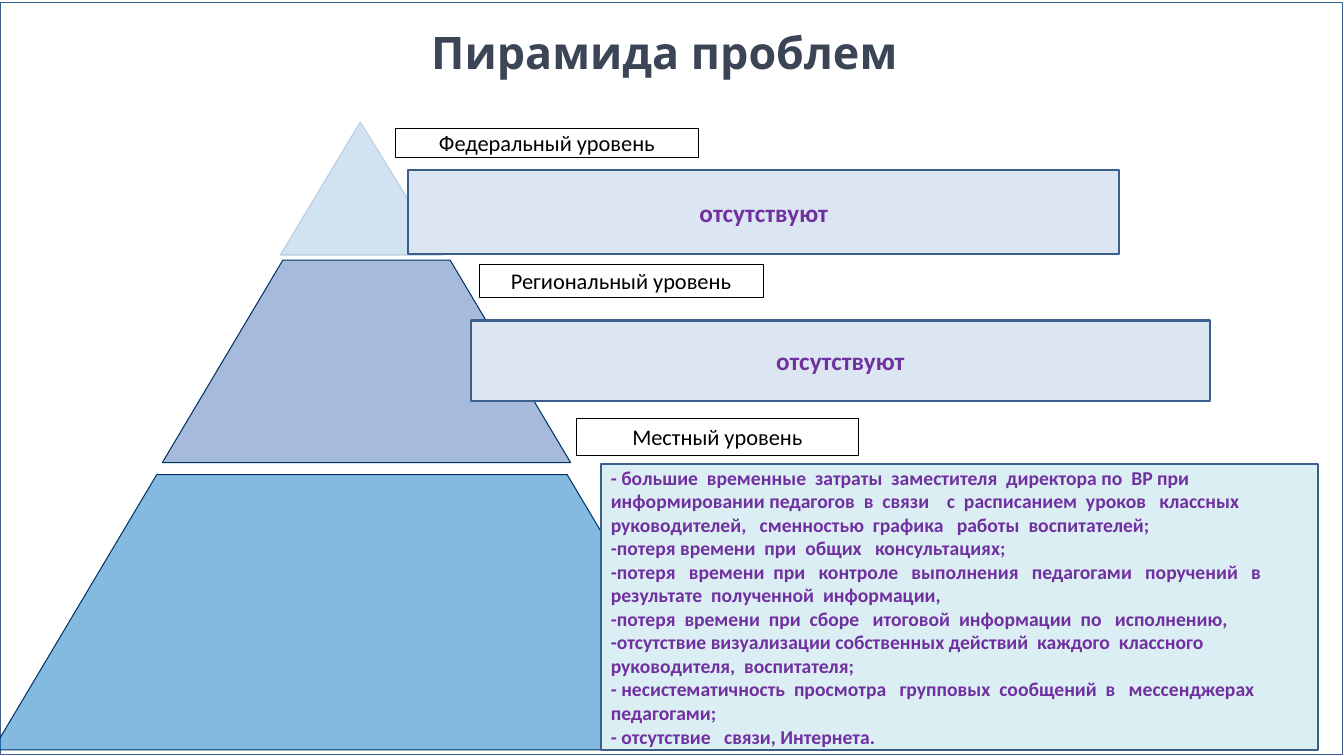
from lxml.etree import SubElement
from pptx import Presentation
from pptx.dml.color import RGBColor
from pptx.enum.shapes import MSO_SHAPE
from pptx.enum.text import MSO_ANCHOR, PP_ALIGN
from pptx.oxml.ns import qn
from pptx.util import Inches, Pt

COLORS = {
    "title": "3B4555", "frame": "3A5F8C", "text": "7030A0", "black": "000000",
    "white": "FFFFFF", "box": "DCE6F2", "local_box": "DBEEF4",
    "top": "327FBE", "top_line": "B9CDE5", "middle": "4770B5",
    "base": "0070C0", "tier_line": "003366",
}

TIERS = [
    (MSO_SHAPE.ISOSCELES_TRIANGLE, (2.78, 1.21, 1.61, 1.32), 0.493, "top", 22, "top_line"),
    (MSO_SHAPE.TRAPEZOID, (1.61, 2.58, 4.05, 2.01), 0.595, "middle", 48, "tier_line"),
    (MSO_SHAPE.TRAPEZOID, (-0.07, 4.71, 7.32, 2.73), 0.595, "base", 48, "tier_line"),
]

LOCAL_PROBLEMS = [
    "- большие  временные  затраты  заместителя  директора по  ВР при  "
    "информировании педагогов  в  связи    с  расписанием  уроков   классных  "
    "руководителей,   сменностью  графика   работы  воспитателей;",
    "-потеря времени  при  общих   консультациях;",
    "-потеря   времени  при   контроле   выполнения   педагогами   поручений   в  "
    "результате  полученной  информации,",
    "-потеря  времени  при  сборе   итоговой  информации  по   исполнению,",
    "-отсутствие визуализации собственных действий  каждого  классного  "
    "руководителя,  воспитателя;",
    "- несистематичность  просмотра   групповых  сообщений  в   мессенджерах  педагогами;",
    "- отсутствие   связи, Интернета.",
]


def color(name):
    """Return a palette colour."""
    return RGBColor.from_string(COLORS[name])


def add_figure(s, kind, box, fill, line, width):
    """Add a flat preset shape; a fill of None leaves it hollow."""
    sp = s.shapes.add_shape(kind, *map(Inches, box))
    sp.shadow.inherit = False
    if fill:
        sp.fill.solid()
        sp.fill.fore_color.rgb = color(fill)
    else:
        sp.fill.background()
    sp.line.color.rgb = color(line)
    sp.line.width = Pt(width)
    return sp


def write(sp, lines, size, name, bold=False, align=PP_ALIGN.CENTER, font="Calibri"):
    """Fill a shape with vertically centred paragraphs."""
    tf = sp.text_frame
    tf.word_wrap = True
    tf.vertical_anchor = MSO_ANCHOR.MIDDLE
    tf.text = "\n".join(lines)
    for p in tf.paragraphs:
        p.alignment = align
        for r in p.runs:
            r.font.name = font
            r.font.size = Pt(size)
            r.font.bold = bold
            r.font.color.rgb = color(name)


def add_title(s, box):
    """Add the slide heading."""
    sp = s.shapes.add_textbox(*map(Inches, box))
    write(sp, ["Пирамида проблем"], 32, "title", True, font="League Spartan")


def add_pyramid(s):
    """Stack the translucent tiers of the pyramid."""
    for kind, box, slope, fill, opacity, line in TIERS:
        sp = add_figure(s, kind, box, fill, line, 0.75)
        sp.adjustments[0] = slope
        rgb = sp.fill._xPr.find(qn("a:solidFill"))[0]
        SubElement(rgb, qn("a:alpha"), val=str(opacity * 1000))


def add_level(s, label, label_box, problems, box, fill="box", size=18, align=PP_ALIGN.CENTER):
    """Add a level's caption and the panel with its problems."""
    caption = add_figure(s, MSO_SHAPE.RECTANGLE, label_box, "white", "black", 0.5)
    write(caption, [label], 16, "black")
    panel = add_figure(s, MSO_SHAPE.RECTANGLE, box, fill, "frame", 1.5)
    write(panel, problems, size, "text", True, align)


def main():
    """Build and save the slide."""
    prs = Presentation()
    prs.slide_width, prs.slide_height = Inches(13.33), Inches(7.5)
    s = prs.slides.add_slide(prs.slide_layouts[6])
    add_figure(s, MSO_SHAPE.RECTANGLE, (0, 0.02, 13.31, 7.46), None, "frame", 0.25)
    add_title(s, (0.71, 0.06, 11.76, 0.91))
    add_pyramid(s)
    add_level(s, "Федеральный уровень", (3.92, 1.27, 3.01, 0.29),
              ["отсутствуют"], (4.05, 1.69, 7.05, 0.83))
    add_level(s, "Региональный уровень", (4.75, 2.62, 2.82, 0.33),
              ["отсутствуют"], (4.67, 3.18, 7.33, 0.8))
    add_level(s, "Местный уровень", (5.72, 4.15, 2.79, 0.37), LOCAL_PROBLEMS,
              (5.96, 4.6, 7.11, 2.84), "local_box", 14, PP_ALIGN.LEFT)
    prs.save("out.pptx")


if __name__ == "__main__":
    main()
